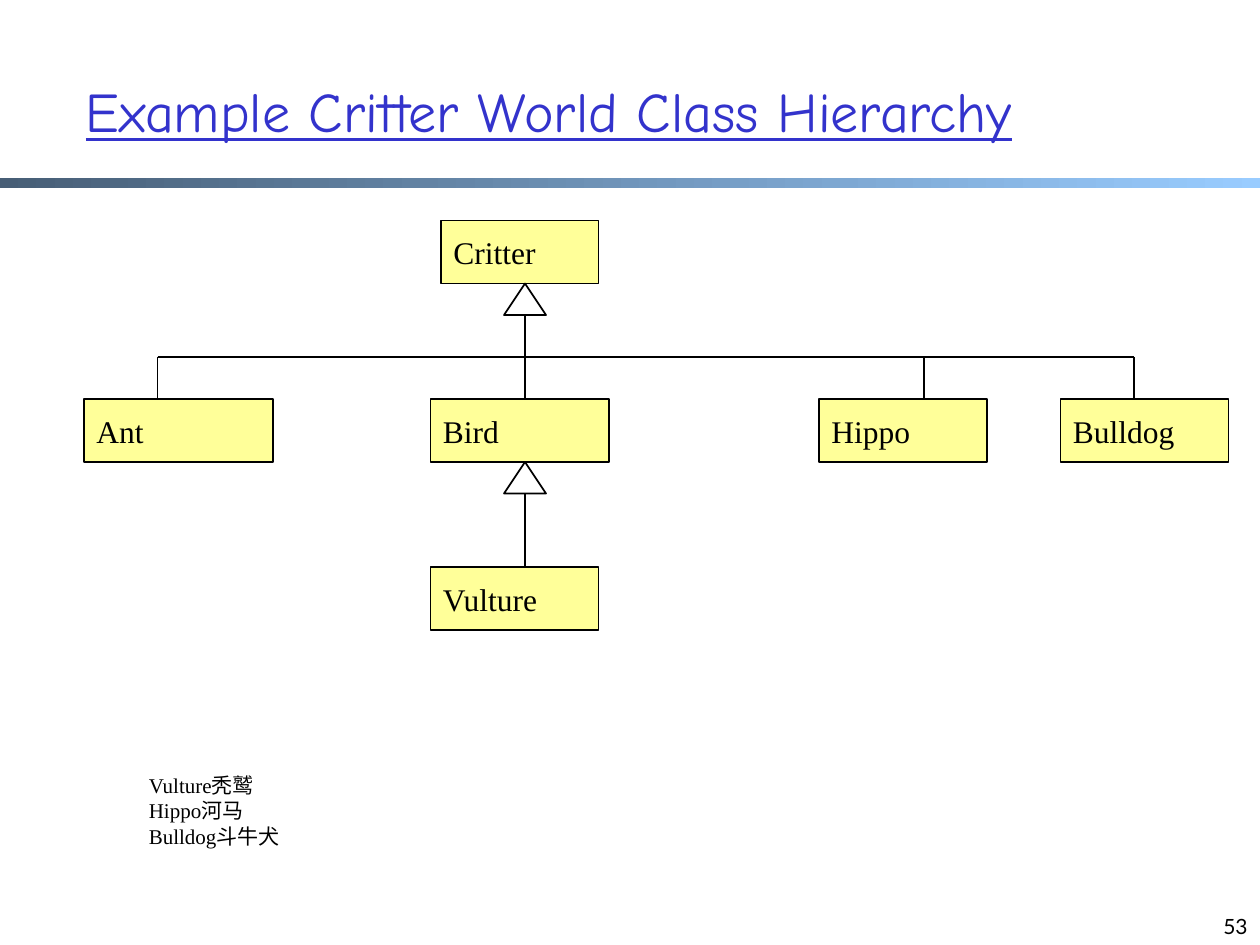
from lxml.etree import SubElement
from pptx import Presentation
from pptx.dml.color import RGBColor
from pptx.enum.shapes import MSO_CONNECTOR, MSO_SHAPE
from pptx.enum.text import MSO_ANCHOR as ANCHOR, PP_ALIGN as ALIGN
from pptx.oxml.ns import qn
from pptx.util import Pt

BLACK = RGBColor(0x00, 0x00, 0x00)
WHITE = RGBColor(0xFF, 0xFF, 0xFF)
YELLOW = RGBColor(0xFF, 0xFF, 0x99)
TITLE_BLUE = RGBColor(0x33, 0x33, 0xCC)
BAR_DARK = RGBColor(0x47, 0x5E, 0x76)
BAR_LIGHT = RGBColor(0x99, 0xCC, 0xFF)

TITLE = "Example Critter World Class Hierarchy"
PAGE = "53"
GLOSSARY = ["Vulture秃鹫", "Hippo河马", "Bulldog斗牛犬"]
CLASSES = [
    ("Critter", 252, 126, 90),
    ("Ant", 48, 228, 108),
    ("Bird", 246, 228, 102),
    ("Hippo", 468, 228, 96),
    ("Bulldog", 606, 228, 96),
    ("Vulture", 246, 324, 96),
]
BOX_H = 36
TRUNK_X = 300
BRANCHES = [90, TRUNK_X, 528, 648]
BRANCH_Y, CHILD_Y = 204, 228
INHERITANCE = [(222, 162), (324, 264)]
HEAD_W, HEAD_H = 24, 18

prs = Presentation()
prs.slide_width, prs.slide_height = Pt(720), Pt(540)
s = prs.slides.add_slide(prs.slide_layouts[6])


def write(sp, *lines, size=18, font="Times New Roman", color=BLACK,
          underline=None, align=ALIGN.LEFT, anchor=ANCHOR.MIDDLE, wrap=True):
    tf = sp.text_frame
    tf.word_wrap = wrap
    tf.vertical_anchor = anchor
    for i, line in enumerate(lines):
        p = tf.add_paragraph() if i else tf.paragraphs[0]
        p.alignment = align
        r = p.add_run()
        r.text = line
        r.font.size, r.font.name = Pt(size), font
        r.font.color.rgb = color
        r.font.underline = underline


def add_text(x, y, w, h, *lines, **fmt):
    write(s.shapes.add_textbox(Pt(x), Pt(y), Pt(w), Pt(h)), *lines, **fmt)


def add_outlined(kind, x, y, w, h, fill):
    sp = s.shapes.add_shape(kind, Pt(x), Pt(y), Pt(w), Pt(h))
    sp.shadow.inherit = False
    sp.fill.solid()
    sp.fill.fore_color.rgb = fill
    sp.line.color.rgb = BLACK
    sp.line.width = Pt(1)
    return sp


def add_line(x1, y1, x2, y2, arrow=False):
    cx = s.shapes.add_connector(MSO_CONNECTOR.STRAIGHT, Pt(x1), Pt(y1), Pt(x2), Pt(y2))
    cx.line.color.rgb = BLACK
    cx.line.width = Pt(1)
    if arrow:
        SubElement(cx.line._get_or_add_ln(), qn("a:tailEnd"), type="triangle")
    SubElement(cx._element.spPr, qn("a:effectLst"))


bar = s.shapes.add_shape(MSO_SHAPE.RECTANGLE, 0, Pt(101.5), Pt(720), Pt(6))
bar.shadow.inherit = False
bar.line.fill.background()
bar.fill.gradient()
bar.fill.gradient_angle = 0
for stop, color in zip(bar.fill.gradient_stops, (BAR_DARK, BAR_LIGHT)):
    stop.color.rgb = color

add_text(552, 504, 168, 36, PAGE, size=12, font="Lato",
         align=ALIGN.RIGHT, anchor=ANCHOR.BOTTOM)
add_text(42, 18, 612, 90, TITLE, size=32, font="Comic Neue",
         color=TITLE_BLUE, underline=True)

for name, x, y, w in CLASSES:
    write(add_outlined(MSO_SHAPE.RECTANGLE, x, y, w, BOX_H, YELLOW), name, wrap=False)

add_line(BRANCHES[0], BRANCH_Y, BRANCHES[-1], BRANCH_Y)
for x in BRANCHES:
    add_line(x, BRANCH_Y, x, CHILD_Y)

for start, tip in INHERITANCE:
    add_line(TRUNK_X, start, TRUNK_X, tip, arrow=True)
    add_outlined(MSO_SHAPE.ISOSCELES_TRIANGLE, TRUNK_X - HEAD_W / 2, tip,
                 HEAD_W, HEAD_H, WHITE)

add_text(78, 438, 360, 51, *GLOSSARY, size=12, anchor=ANCHOR.TOP)

prs.save("out.pptx")
